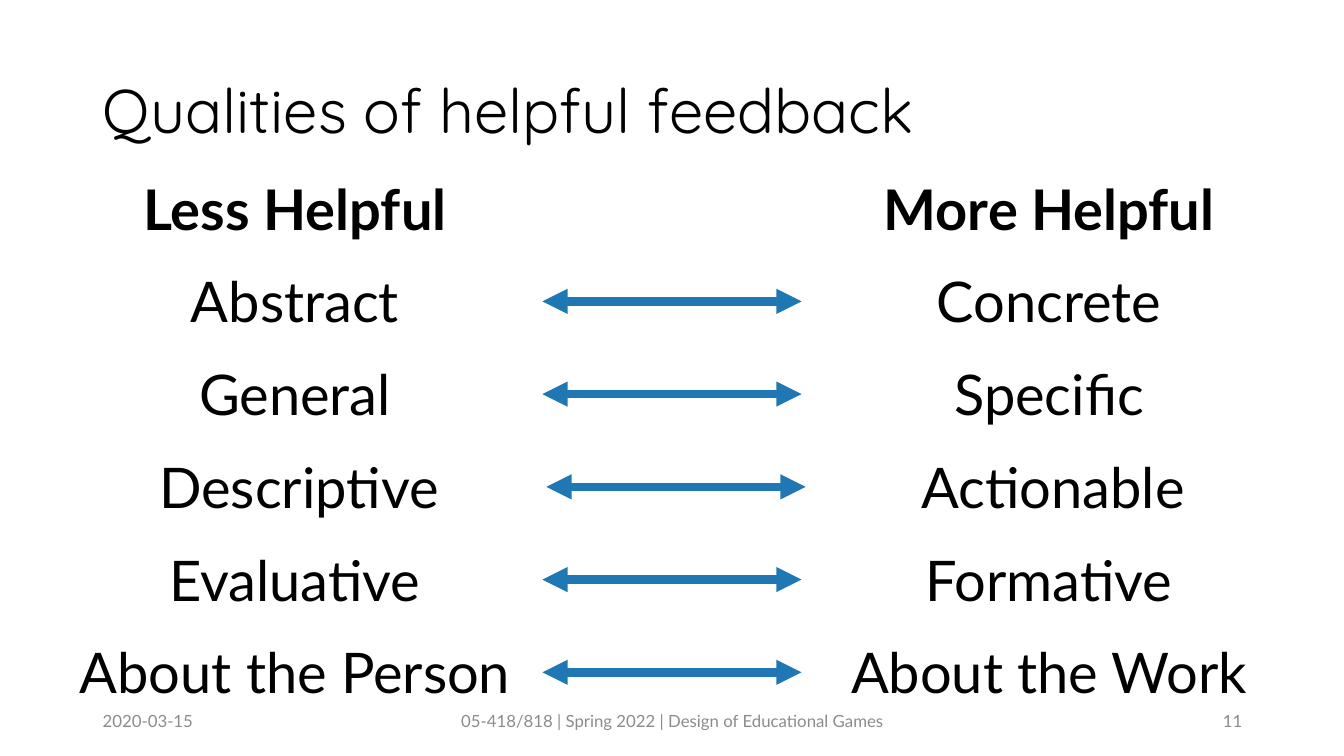
from lxml import etree
from pptx import Presentation
from pptx.dml.color import RGBColor
from pptx.enum.shapes import MSO_CONNECTOR
from pptx.enum.text import MSO_ANCHOR as ANCHOR, MSO_AUTO_SIZE as AUTO_SIZE, PP_ALIGN as ALIGN
from pptx.oxml.ns import qn
from pptx.util import Inches, Pt

COLORS = {"text": "000000", "arrow": "1F78B4", "footer": "8C8C8C"}
TITLE_FONT, BODY_FONT = "Quicksand", "Lato"

FIRST_ROW_TOP, ROW_PITCH, ROW_HEIGHT = 1.68, 0.92, 0.77
COLUMN_WIDTH, MORE_OFFSET = 5.85, 7.48
ARROW_OFFSET, ARROW_LENGTH = 5.38, 2.57

# less helpful, more helpful, shift of the row to the right
QUALITIES = [
    ("Abstract", "Concrete", 0),
    ("General", "Specific", 0),
    ("Descriptive", "Actionable", 0.04),
    ("Evaluative", "Formative", 0),
    ("About the Person", "About the Work", 0),
]


def add_text(shapes, box, text, size, font=BODY_FONT, color="text",
             align=ALIGN.LEFT, anchor=ANCHOR.MIDDLE, bold=False):
    """Place one line of text in box (left, top, width, height in inches)."""
    frame = shapes.add_textbox(*map(Inches, box)).text_frame
    frame.word_wrap = True
    frame.vertical_anchor = anchor
    frame.text = text
    paragraph = frame.paragraphs[0]
    paragraph.alignment = align
    run_font = paragraph.runs[0].font
    run_font.name = font
    run_font.size = Pt(size)
    run_font.bold = bold
    run_font.color.rgb = RGBColor.from_string(COLORS[color])
    return frame


def add_double_arrow(shapes, left, y, length):
    arrow = shapes.add_connector(MSO_CONNECTOR.STRAIGHT, Inches(left), Inches(y),
                                 Inches(left + length), Inches(y))
    arrow.line.color.rgb = RGBColor.from_string(COLORS["arrow"])
    arrow.line.width = Pt(6)
    properties = arrow.line._get_or_add_ln()
    for end in ("a:headEnd", "a:tailEnd"):
        etree.SubElement(properties, qn(end), type="triangle")
    etree.SubElement(arrow._element.spPr, qn("a:effectLst"))


def add_title(slide, box):
    frame = add_text(slide.shapes, box, "Qualities of helpful feedback", 44, TITLE_FONT)
    frame.paragraphs[0].line_spacing = 0.9


def add_comparison_row(slide, left, top, less, more, heading=False):
    """Group a less helpful quality with its more helpful counterpart."""
    row = slide.shapes.add_group_shape().shapes
    for offset, label in ((0, less), (MORE_OFFSET, more)):
        frame = add_text(row, (left + offset, top, COLUMN_WIDTH, ROW_HEIGHT), label, 40,
                         align=ALIGN.CENTER, anchor=ANCHOR.TOP, bold=heading)
        frame.auto_size = AUTO_SIZE.SHAPE_TO_FIT_TEXT
    if not heading:
        add_double_arrow(row, left + ARROW_OFFSET, top + 0.39, ARROW_LENGTH)


def add_comparison(slide, left, top):
    add_comparison_row(slide, left, top, "Less Helpful", "More Helpful", heading=True)
    for number, (less, more, shift) in enumerate(QUALITIES, start=1):
        add_comparison_row(slide, left + shift, top + number * ROW_PITCH, less, more)


def add_footer(slide, box):
    left, top, width, height = box
    course = "05-418/818 | Spring 2022 | Design of Educational Games"
    parts = [
        ("2020-03-15", 0, 3, ALIGN.LEFT),
        (course, (width - 4.5) / 2, 4.5, ALIGN.CENTER),
        ("11", width - 3, 3, ALIGN.RIGHT),
    ]
    for text, offset, part_width, align in parts:
        add_text(slide.shapes, (left + offset, top, part_width, height), text, 12,
                 color="footer", align=align)


def main():
    deck = Presentation()
    deck.slide_width, deck.slide_height = Inches(13.33), Inches(7.5)
    slide = deck.slides.add_slide(deck.slide_layouts[6])
    add_title(slide, (0.92, 0.4, 11.5, 1.45))
    add_comparison(slide, 0, FIRST_ROW_TOP)
    add_footer(slide, (0.92, 6.95, 11.5, 0.4))
    deck.save("out.pptx")


if __name__ == "__main__":
    main()
